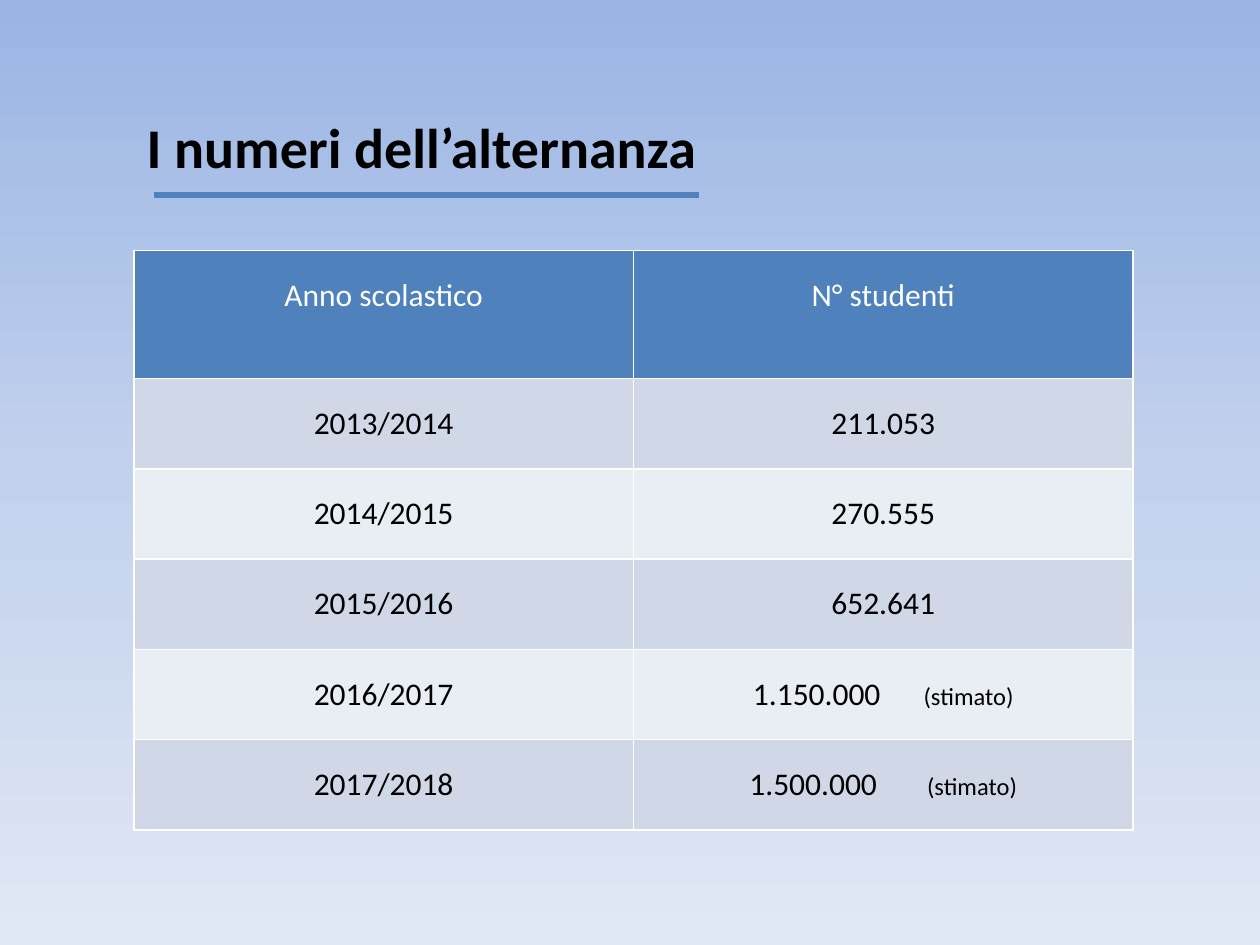
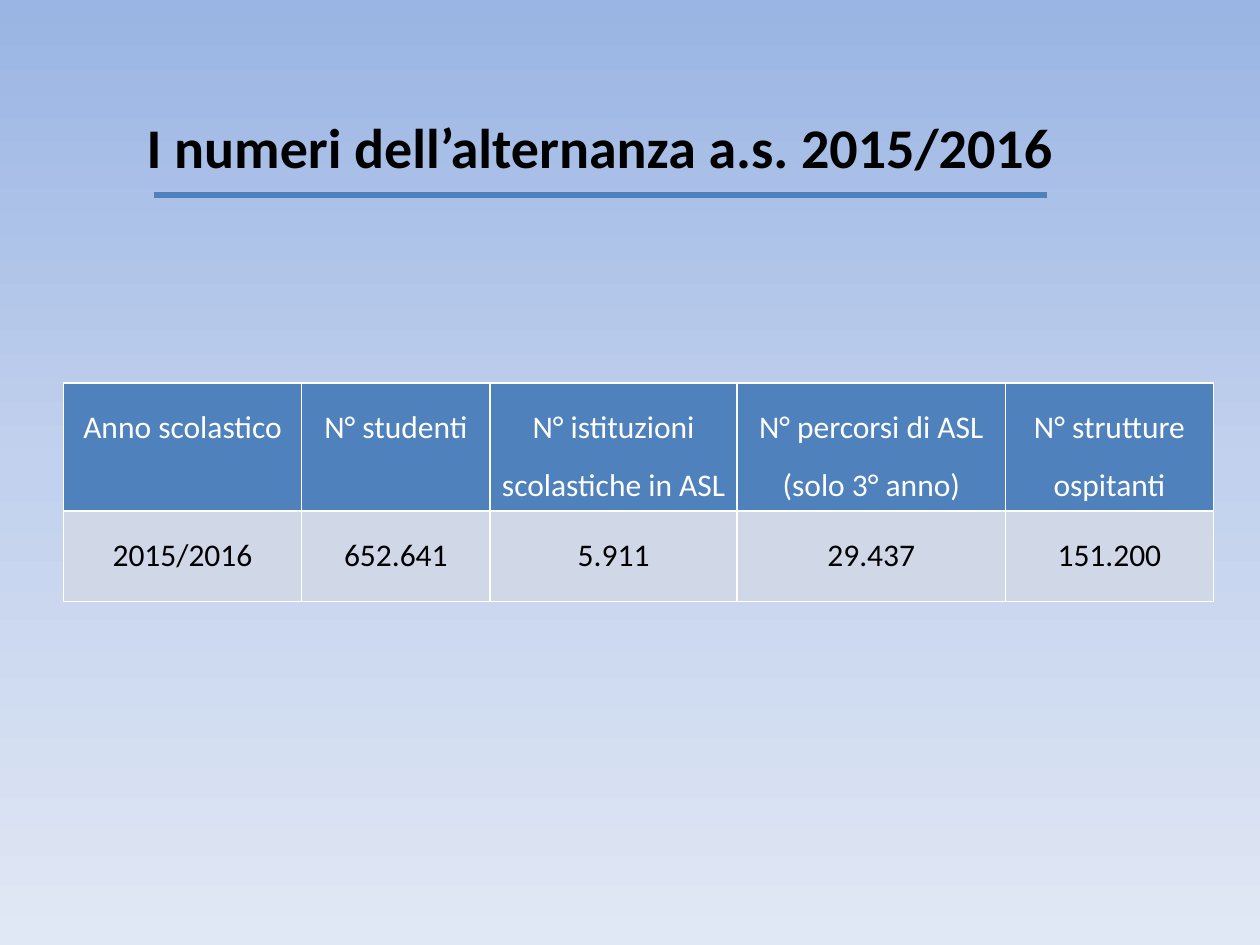
from copy import deepcopy
from lxml import etree
from pptx import Presentation
from pptx import util as u
from pptx.dml.color import RGBColor
from pptx.enum import shapes, text
from pptx.oxml.ns import qn

BLUE, WHITE, BLACK = "4F81BD", "FFFFFF", "000000"
BANDS = ["E9EDF4", "D0D8E8"]
SKY = [(0, "9AB5E4"), (0.5, "C2D1ED"), (1, "E1E8F5")]
HEAD, ROW = 2.58, 1.82


def paint(part, tone):
    if hasattr(part, "solid"):
        part.solid()
        part = part.fore_color
    part.rgb = RGBColor.from_string(tone)


def edge(cell):
    props = cell._tc.get_or_add_tcPr()
    for spot, side in enumerate(["lnL", "lnR", "lnT", "lnB"]):
        line = etree.Element(qn("a:" + side), w=str(u.Pt(1)))
        fill = etree.SubElement(line, qn("a:solidFill"))
        etree.SubElement(fill, qn("a:srgbClr"), val=WHITE)
        props.insert(spot, line)


pages = [
    {
        "title": "I numeri dell’alternanza", "wide": 16.81, "end": 14.1,
        "left": 2.7, "top": 5.05, "cols": [10.07, 10.07],
        "rows": [
            ["Anno scolastico", "N° studenti"],
            ["2013/2014", "211.053"],
            ["2014/2015", "270.555"],
            ["2015/2016", "652.641"],
            ["2016/2017", ("1.150.000", 20.5, "(stimato)")],
            ["2017/2018", ("1.500.000", 24.5, "(stimato)")],
        ],
    },
    {
        "title": "I numeri dell’alternanza a.s. 2015/2016", "wide": 20.6, "end": 21.1,
        "left": 1.28, "top": 7.72, "cols": [4.8, 3.8, 4.98, 5.41, 4.19],
        "rows": [
            ["Anno scolastico", "N° studenti", "N° istituzioni scolastiche in ASL",
             "N° percorsi di ASL\n(solo 3° anno)", "N° strutture ospitanti"],
            ["2015/2016", "652.641", "5.911", "29.437", "151.200"],
        ],
    },
]

deck = Presentation()
deck.slide_width, deck.slide_height = u.Cm(25.4), u.Cm(19.05)

back = deck.slide_master.background.fill
back.gradient()
back.gradient_angle = 270
stops = deck.slide_master.element.find(".//" + qn("a:gsLst"))
stops.insert(1, deepcopy(stops[0]))
for stop, (place, tone) in zip(back.gradient_stops, SKY):
    stop.position = place
    paint(stop.color, tone)

for page in pages:
    slide = deck.slides.add_slide(deck.slide_layouts[5])
    title = slide.shapes.title
    title.left, title.top = u.Cm(2.7), u.Cm(1.35)
    title.width, title.height = u.Cm(page["wide"]), u.Cm(3.18)
    title.text_frame.vertical_anchor = text.MSO_ANCHOR.MIDDLE
    para = title.text_frame.paragraphs[0]
    para.alignment = text.PP_ALIGN.LEFT
    run = para.add_run()
    run.text = page["title"]
    run.font.name, run.font.size, run.font.bold = "Calibri", u.Pt(32), True
    paint(run.font.color, BLACK)

    rule = slide.shapes.add_connector(
        shapes.MSO_CONNECTOR.STRAIGHT, u.Cm(3.1), u.Cm(3.93), u.Cm(page["end"]), u.Cm(3.93))
    rule.line.width = u.Pt(3)
    paint(rule.line.color, BLUE)
    etree.SubElement(rule._element.spPr, qn("a:effectLst"))

    rows, cols = page["rows"], page["cols"]
    grid = slide.shapes.add_table(
        len(rows), len(cols), u.Cm(page["left"]), u.Cm(page["top"]),
        u.Cm(sum(cols)), u.Cm(HEAD + ROW * (len(rows) - 1))).table
    for col, width in zip(grid.columns, cols):
        col.width = u.Cm(width)

    for r, row in enumerate(rows):
        grid.rows[r].height = u.Cm(ROW if r else HEAD)
        for c, entry in enumerate(row):
            cell = grid.cell(r, c)
            paint(cell.fill, BANDS[r % 2] if r else BLUE)
            edge(cell)
            cell.margin_left = cell.margin_right = u.Cm(0.19)
            cell.margin_top = cell.margin_bottom = u.Cm(0.13)
            value, gap, note = entry if isinstance(entry, tuple) else (entry, 0, "")
            for n, words in enumerate(value.split("\n")):
                frame = cell.text_frame
                para = frame.add_paragraph() if n else frame.paragraphs[0]
                para.alignment = text.PP_ALIGN.CENTER
                para.line_spacing = 1.5
                parts = [(words, 18, 0)]
                if note:
                    parts += [(" ", 18, gap), (note, 14, 0)]
                for words, size, space in parts:
                    run = para.add_run()
                    run.text = words
                    run.font.name, run.font.size, run.font.bold = "Calibri", u.Pt(size), False
                    paint(run.font.color, BLACK if r else WHITE)
                    if space:
                        run._r.get_or_add_rPr().set("spc", str(int(space * 100)))

deck.save("out.pptx")
